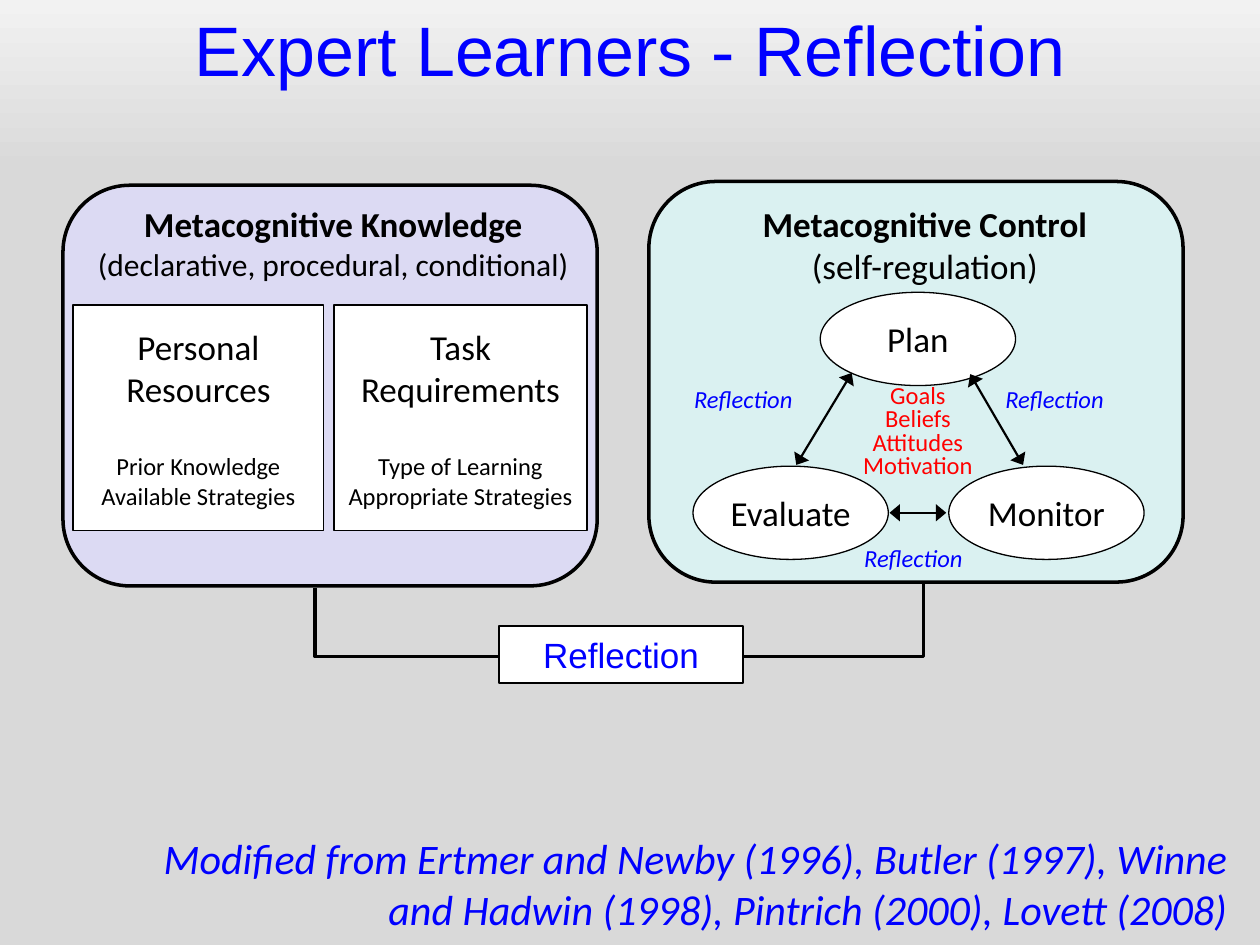
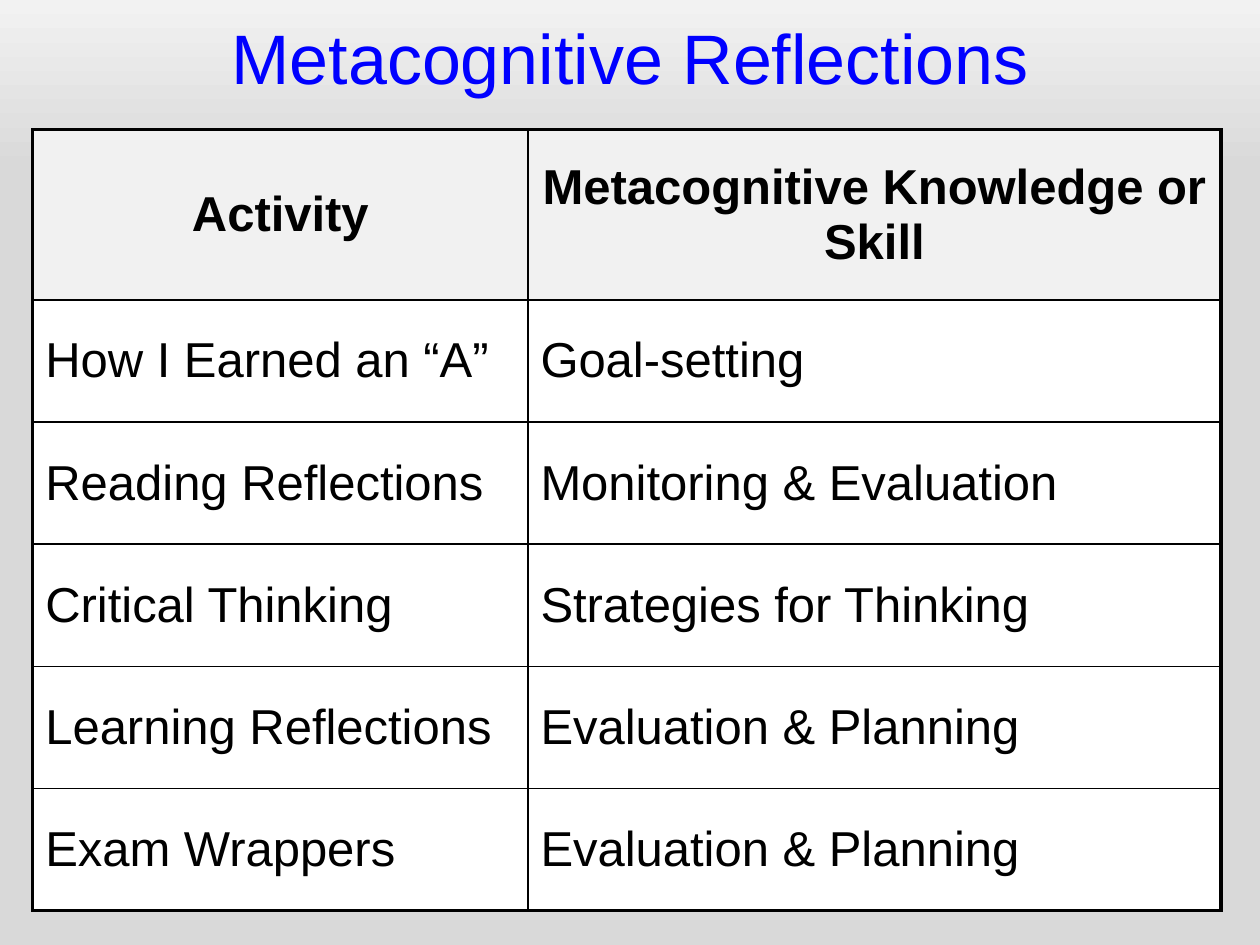
from copy import deepcopy

from lxml.etree import SubElement
from pptx import Presentation
from pptx.dml.color import RGBColor
from pptx.enum.shapes import MSO_CONNECTOR, MSO_SHAPE as SHAPE
from pptx.enum.text import MSO_ANCHOR as ANCHOR, PP_ALIGN as ALIGN
from pptx.oxml.ns import qn
from pptx.util import Inches, Pt

COLORS = {
    "ink": "000000", "blue": "0000FF", "red": "FF0000", "white": "FFFFFF",
    "lilac": "DCDAF3", "aqua": "DAF1F1", "header": "F1F1F1",
    "bg_top": "F2F2F2", "bg": "D9D9D9",
}
BODY, HEAD = "Calibri", "Arial"


def rgb(name):
    return RGBColor.from_string(COLORS[name])


def add_text(tf, text, size=20, font=BODY, color="ink", bold=False, italic=False,
             align=ALIGN.CENTER, spacing=None, before=None):
    """Write one paragraph per line of text, after any text already there."""
    for i, line in enumerate(text.split("\n")):
        p = tf.add_paragraph() if tf.text else tf.paragraphs[0]
        p.alignment = align
        if spacing:
            p.line_spacing = spacing
        if before and i == 0:
            p.space_before = Pt(before)
        r = p.add_run()
        r.text = line
        r.font.size, r.font.name = Pt(size), font
        r.font.bold, r.font.italic = bold, italic
        r.font.color.rgb = rgb(color)


class Deck:
    def __init__(self):
        self.prs = Presentation()
        self.prs.slide_width, self.prs.slide_height = Inches(10), Inches(7.5)
        self.slide = None
        self.set_background()

    def set_background(self):
        master = self.prs.slide_master
        fill = master.background.fill
        fill.gradient()
        fill.gradient_angle = 270
        for stop, pos, color in zip(fill.gradient_stops, (0, 0.18), ("bg_top", "bg")):
            stop.position = pos
            stop.color.rgb = rgb(color)
        stops = master.element.xpath("./p:cSld/p:bg//a:gsLst")[0]
        last = deepcopy(stops[-1])
        last.set("pos", "100000")
        stops.append(last)

    def new_slide(self, title, top):
        self.slide = self.prs.slides.add_slide(self.prs.slide_layouts[6])
        tf = self.text_box(0, top, 10, 0.77)
        add_text(tf, title, size=40, font=HEAD, color="blue")

    def text_box(self, x, y, w, h, wrap=True):
        sp = self.slide.shapes.add_textbox(*map(Inches, (x, y, w, h)))
        sp.text_frame.word_wrap = wrap
        return sp.text_frame

    def shape(self, kind, x, y, w, h, fill="white", line=0.75):
        sp = self.slide.shapes.add_shape(kind, *map(Inches, (x, y, w, h)))
        sp.shadow.inherit = False
        sp.fill.solid()
        sp.fill.fore_color.rgb = rgb(fill)
        sp.line.color.rgb = rgb("ink")
        sp.line.width = Pt(line)
        tf = sp.text_frame
        tf.word_wrap = False
        tf.vertical_anchor = ANCHOR.MIDDLE
        return tf

    def polyline(self, points, line=2):
        start, *rest = [(Inches(x), Inches(y)) for x, y in points]
        fb = self.slide.shapes.build_freeform(*start)
        fb.add_line_segments(rest, close=False)
        sp = fb.convert_to_shape()
        sp.shadow.inherit = False
        sp.fill.background()
        sp.line.color.rgb = rgb("ink")
        sp.line.width = Pt(line)

    def double_arrow(self, x1, y1, x2, y2):
        cx = self.slide.shapes.add_connector(
            MSO_CONNECTOR.STRAIGHT, *map(Inches, (x1, y1, x2, y2)))
        cx.line.color.rgb = rgb("ink")
        cx.line.width = Pt(1.25)
        props = cx.element.spPr
        ln = props.find(qn("a:ln"))
        for end in ("a:headEnd", "a:tailEnd"):
            SubElement(ln, qn(end), type="triangle", w="lg", len="med")
        SubElement(props, qn("a:effectLst"))

    def table(self, x, y, widths, heights, rows):
        frame = self.slide.shapes.add_table(
            len(rows), len(widths), Inches(x), Inches(y),
            Inches(sum(widths)), Inches(sum(heights)))
        table = frame.table
        table.horz_banding = False
        for col, w in zip(table.columns, widths):
            col.width = Inches(w)
        for row, h in zip(table.rows, heights):
            row.height = Inches(h)
        for i, row in enumerate(rows):
            for j, text in enumerate(row):
                cell = table.cell(i, j)
                self.cell_borders(cell, L=j == 0, R=j == len(row) - 1,
                                  T=i == 0, B=i == len(rows) - 1)
                cell.fill.solid()
                cell.fill.fore_color.rgb = rgb("white" if i else "header")
                cell.vertical_anchor = ANCHOR.MIDDLE
                add_text(cell.text_frame, text, size=28, font=HEAD, bold=i == 0,
                         align=ALIGN.LEFT if i else ALIGN.CENTER)

    def cell_borders(self, cell, **outer):
        """Draw the four sides, thicker where a side is on the table's edge."""
        props = cell._tc.get_or_add_tcPr()
        for side, is_outer in outer.items():
            ln = SubElement(props, qn(f"a:ln{side}"), w=str(Pt(2.25 if is_outer else 1)))
            fill = SubElement(ln, qn("a:solidFill"))
            SubElement(fill, qn("a:srgbClr"), val=COLORS["ink"])


def expert_learners(deck):
    deck.new_slide("Expert Learners - Reflection", 0)
    add_text(deck.text_box(1.16, 6.56, 8.68, 0.91),
             "Modified from Ertmer and Newby (1996), Butler (1997), Winne and Hadwin "
             "(1998), Pintrich (2000), Lovett (2008)",
             size=24, color="blue", italic=True, align=ALIGN.RIGHT)

    panels = [
        (0.5, 1.47, "lilac", (0.51, 4.27), "Metacognitive Knowledge",
         "(declarative, procedural, conditional)", 18),
        (5.15, 1.44, "aqua", (5.78, 3.12), "Metacognitive Control",
         "(self-regulation)", 20),
    ]
    for x, y, fill, (text_x, text_w), heading, detail, size in panels:
        deck.shape(SHAPE.ROUNDED_RECTANGLE, x, y, 4.24, 3.18, fill, line=2)
        tf = deck.text_box(text_x, 1.56, text_w, 0.77, wrap=False)
        add_text(tf, heading, bold=True)
        add_text(tf, detail, size=size)

    deck.polyline([(2.5, 4.67), (2.5, 5.21), (7.33, 5.21), (7.33, 4.62)])
    tf = deck.shape(SHAPE.RECTANGLE, 3.96, 4.97, 1.94, 0.45, line=1)
    add_text(tf, "Reflection", font=HEAD, color="blue")

    for x, w, topic, examples in [
        (0.58, 1.99, "Personal\nResources", "Prior Knowledge\nAvailable Strategies"),
        (2.65, 2.01, "Task\nRequirements", "Type of Learning\nAppropriate Strategies"),
    ]:
        tf = deck.shape(SHAPE.RECTANGLE, x, 2.42, w, 1.79)
        add_text(tf, topic)
        add_text(tf, examples, size=14, before=24)

    for x, y, step in [(6.51, 2.32, "Plan"), (5.5, 3.7, "Evaluate"), (7.53, 3.7, "Monitor")]:
        add_text(deck.shape(SHAPE.OVAL, x, y, 1.55, 0.74), step)
    for ends in [(6.76, 2.96, 6.32, 3.69), (7.51, 4.07, 7.06, 4.07), (7.7, 2.97, 8.12, 3.69)]:
        deck.double_arrow(*ends)
    add_text(deck.text_box(6.74, 3.01, 1.09, 0.86),
             "Goals\nBeliefs\nAttitudes\nMotivation", size=14, color="red", spacing=0.8)
    for x, y in [(5.41, 3), (7.88, 3), (6.76, 4.26)]:
        add_text(deck.text_box(x, y, 1.08, 0.34, wrap=False), "Reflection",
                 size=14, color="blue", italic=True, align=ALIGN.LEFT)


def metacognitive_reflections(deck):
    deck.new_slide("Metacognitive Reflections", 0.07)
    deck.table(0.26, 1.03, [3.93, 5.5], [1.35] + [0.97] * 5, [
        ("Activity", "Metacognitive Knowledge or Skill"),
        ("How I Earned an “A”", "Goal-setting"),
        ("Reading Reflections", "Monitoring & Evaluation"),
        ("Critical Thinking", "Strategies for Thinking"),
        ("Learning Reflections", "Evaluation & Planning"),
        ("Exam Wrappers", "Evaluation & Planning"),
    ])


def main():
    deck = Deck()
    expert_learners(deck)
    metacognitive_reflections(deck)
    deck.prs.save("out.pptx")


if __name__ == "__main__":
    main()
